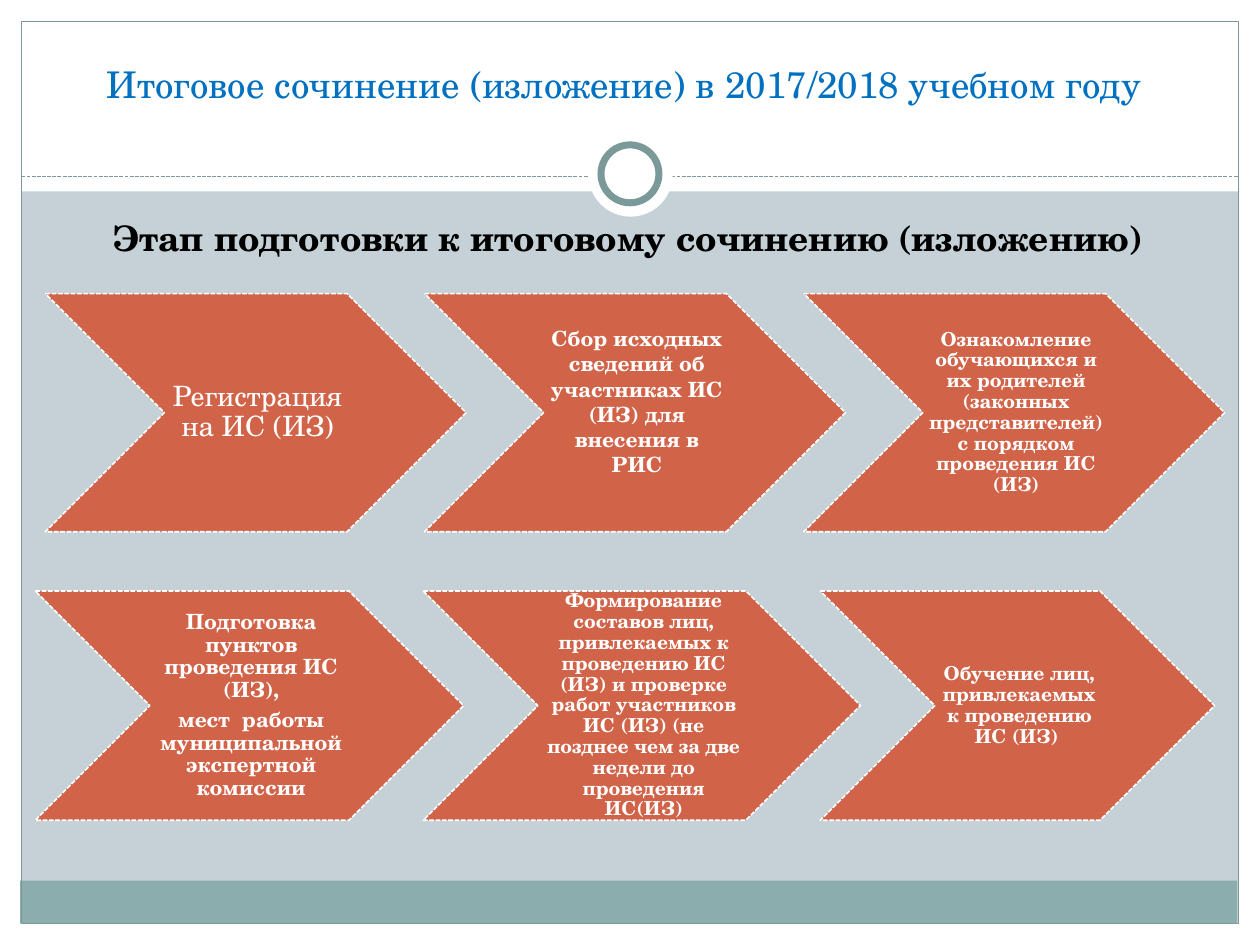
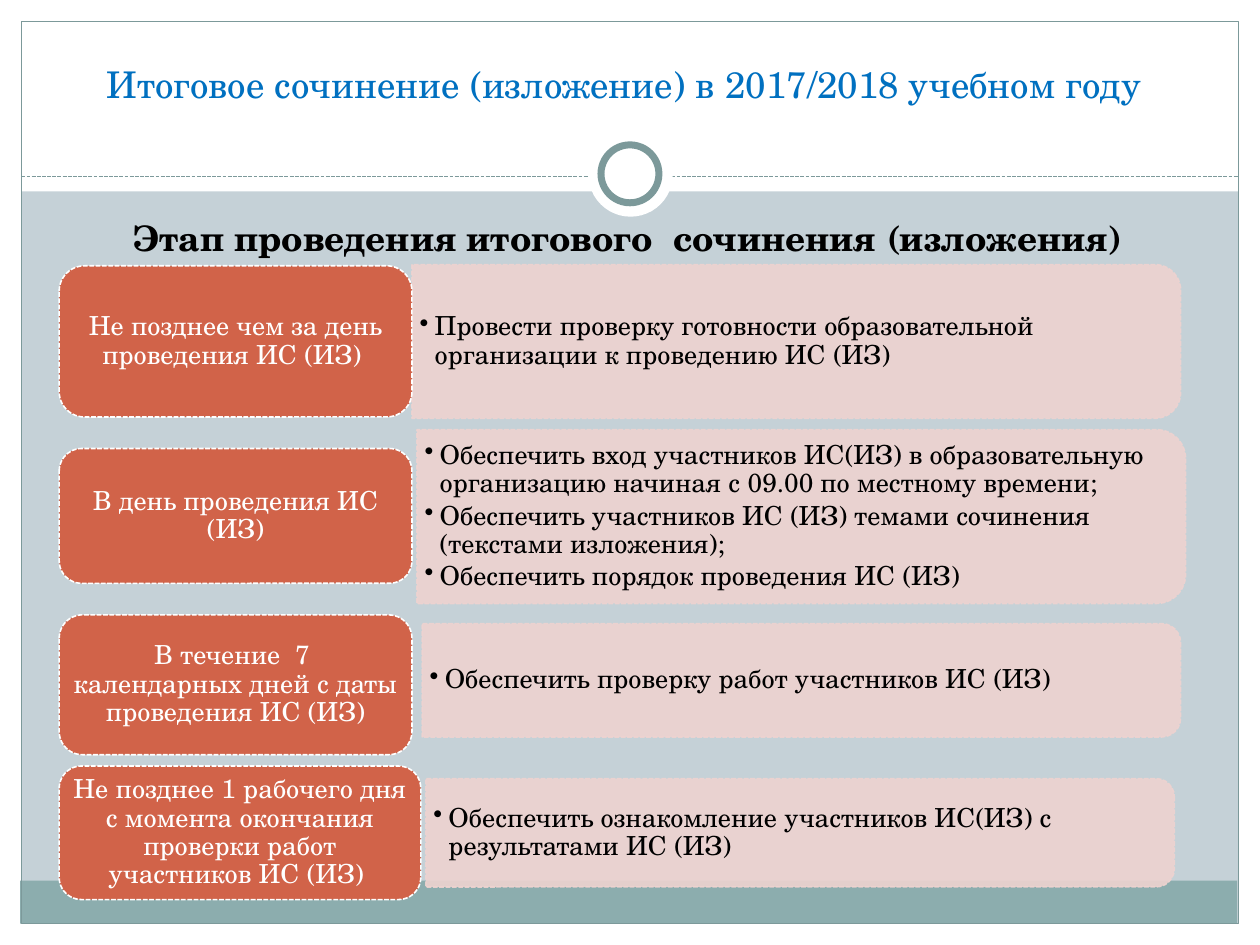
from lxml.etree import SubElement
from pptx import Presentation
from pptx.dml.color import RGBColor
from pptx.enum.dml import MSO_LINE
from pptx.enum.shapes import MSO_CONNECTOR, MSO_SHAPE as SHAPE
from pptx.enum.text import MSO_ANCHOR as ANCHOR, MSO_AUTO_SIZE, PP_ALIGN as ALIGN
from pptx.oxml.ns import qn
from pptx.util import Inches, Pt

FONT = "TeX Gyre Schola"
WHITE = RGBColor(0xFF, 0xFF, 0xFF)
BLACK = RGBColor(0, 0, 0)
BACKGROUND = RGBColor(0xC5, 0xD1, 0xD7)
BAND = RGBColor(0x8C, 0xAD, 0xAE)
FRAME = RGBColor(0x7C, 0x99, 0x9A)
TITLE_BLUE = RGBColor(0x00, 0x70, 0xC0)
ORANGE = RGBColor(0xD1, 0x63, 0x49)
PINK = RGBColor(0xEE, 0xD3, 0xD0)

TITLE = "Итоговое сочинение (изложение) в 2017/2018 учебном году "

# Chevron: width, text size, bold, text, bottom inset
REGISTRATION_ROW = [
    (3.34, 16, False, "Регистрация на ИС (ИЗ)", 0.02),
    (3.34, 12, True, "Сбор исходных сведений об участниках ИС (ИЗ) для внесения в РИС", 0.2),
    (3.34, 11, True, "Ознакомление обучающихся и их родителей (законных представителей) "
                     "с порядком проведения ИС (ИЗ)", 0.02),
]
PREPARATION_ROW = [
    (3.4, 12, True, "Подготовка пунктов проведения ИС (ИЗ),\n"
                    "мест  работы муниципальной экспертной комиссии", 0.02),
    (3.47, 11, True, "Формирование составов лиц, привлекаемых к проведению ИС (ИЗ) и проверке "
                     "работ участников ИС (ИЗ) (не позднее чем за две недели до проведения ИС(ИЗ)", 0.02),
    (3.13, 11, True, "Обучение лиц, привлекаемых к проведению ИС (ИЗ) ", 0.02),
]

# Stage: deadline box, deadline, task panel, tasks
STAGES = [
    ((0.47, 2.11, 2.8, 1.2), "Не позднее чем за день проведения ИС (ИЗ) ",
     (3.27, 2.1, 6.1, 1.22),
     "Провести проверку готовности образовательной организации к проведению ИС (ИЗ)"),
    ((0.47, 3.56, 2.8, 1.07), "В день проведения ИС (ИЗ)",
     (3.31, 3.41, 6.1, 1.38),
     "Обеспечить вход участников ИС(ИЗ) в образовательную организацию начиная "
     "с 09.00 по местному времени;\n"
     "Обеспечить участников ИС (ИЗ) темами сочинения (текстами изложения);\n"
     "Обеспечить порядок проведения ИС (ИЗ)"),
    ((0.47, 4.88, 2.8, 1.11), "В течение  7  календарных дней с даты проведения ИС (ИЗ)",
     (3.35, 4.95, 6.02, 0.9),
     "Обеспечить проверку работ участников ИС (ИЗ)"),
    ((0.47, 6.08, 2.87, 1.06), "Не позднее 1 рабочего дня с момента окончания проверки "
                               "работ участников ИС (ИЗ) ",
     (3.38, 6.18, 5.94, 0.86),
     "Обеспечить ознакомление участников ИС(ИЗ) с результатами ИС (ИЗ)"),
]


def place(box):
    return [Inches(length) for length in box]


def add_shape(page, kind, box, fill=None, line=None, width=0.75, dash=None):
    shape = page.shapes.add_shape(kind, *place(box))
    shape.shadow.inherit = False
    if fill is None:
        shape.fill.background()
    else:
        shape.fill.solid()
        shape.fill.fore_color.rgb = fill
    if line is None:
        shape.line.fill.background()
    else:
        shape.line.color.rgb = line
        shape.line.width = Pt(width)
        shape.line.dash_style = dash
    return shape


def write(shape, text, size, color, bold=False, align=ALIGN.CENTER, anchor=ANCHOR.MIDDLE,
          insets=(0.1, 0.05, 0.1, 0.05), spacing=None, after=0):
    """Fill a shape with text; after is a share of the text size."""
    frame = shape.text_frame
    frame.text = text
    frame.word_wrap = True
    frame.auto_size = MSO_AUTO_SIZE.NONE
    frame.vertical_anchor = anchor
    (frame.margin_left, frame.margin_top,
     frame.margin_right, frame.margin_bottom) = place(insets)
    for para in frame.paragraphs:
        para.alignment = align
        para.line_spacing = spacing
        para.space_after = Pt(round(size * after, 1))
        for span in para.runs:
            span.font.name = FONT
            span.font.size = Pt(size)
            span.font.bold = bold
            span.font.color.rgb = color


def add_bullets(frame):
    for para in frame.paragraphs:
        properties = para._p.get_or_add_pPr()
        properties.set("marL", str(Inches(0.12)))
        properties.set("indent", str(-Inches(0.12)))
        SubElement(properties, qn("a:buChar")).set("char", "•")


def decorate_layout(page):
    """Draw the shared frame on a page, then move it into the page's layout."""
    parts = [add_shape(page, SHAPE.RECTANGLE, box, fill) for box, fill in [
        ((0, 7.33, 10, 0.17), WHITE),
        ((0, 0, 10, 1.52), WHITE),
        ((0, 0, 0.17, 7.5), WHITE),
        ((9.83, 0, 0.17, 7.5), WHITE),
        ((0.16, 6.99, 9.66, 0.34), BAND),
    ]]
    parts.append(add_shape(page, SHAPE.RECTANGLE, (0.17, 0.17, 9.66, 7.16), line=FRAME))

    divider = page.shapes.add_connector(MSO_CONNECTOR.STRAIGHT, *place((0.17, 1.4, 9.83, 1.4)))
    divider.line.color.rgb = FRAME
    divider.line.width = Pt(0.75)
    divider.line.dash_style = MSO_LINE.SQUARE_DOT
    SubElement(divider.element.spPr, qn("a:effectLst"))
    parts.append(divider)

    parts.append(add_shape(page, SHAPE.OVAL, (4.67, 1.05, 0.67, 0.67), WHITE))
    parts.append(add_shape(page, SHAPE.OVAL, (4.77, 1.15, 0.46, 0.46), WHITE, FRAME, 4))

    for number, part in enumerate(parts, start=101):
        part.element.xpath(".//p:cNvPr")[0].set("id", str(number))
        page.slide_layout.shapes.element.append(part.element)


def add_page(deck, layout, heading):
    page = deck.slides.add_slide(layout)
    title = page.shapes.title
    title.left, title.top, title.width, title.height = place((0.33, 0.25, 9.33, 0.83))
    write(title, TITLE, 21, TITLE_BLUE)
    box = page.shapes.add_textbox(*place((0.33, 1.67, 9.3, 5)))
    write(box, heading, 20, BLACK, bold=True, anchor=ANCHOR.TOP)
    box.text_frame.paragraphs[0].space_before = Pt(4)
    return page


def add_chevron_row(page, left, top, height, overlap, steps):
    for width, size, bold, text, bottom in steps:
        chevron = add_shape(page, SHAPE.CHEVRON, (left, top, width, height),
                            ORANGE, WHITE, 0.9, MSO_LINE.SQUARE_DOT)
        spacing = 0.9 if bottom == 0.02 else 1.0
        write(chevron, text, size, WHITE, bold, insets=(0.05, 0.02, 0.02, bottom),
              spacing=spacing, after=0.35)
        left += width - overlap


def add_task_panel(page, box, tasks):
    left, top, width, height = box
    # The panel is a top-rounded rectangle turned to the right about its centre
    turned = (left + (width - height) / 2, top + (height - width) / 2, height, width)
    panel = add_shape(page, SHAPE.ROUND_2_SAME_RECTANGLE, turned,
                      PINK, PINK, 0.9, MSO_LINE.SQUARE_DOT)
    panel.rotation = 90
    for color in panel.element.spPr.iter(qn("a:srgbClr")):
        SubElement(color, qn("a:alpha")).set("val", "90000")

    corner = 0.05 * height
    label = page.shapes.add_textbox(
        *place((left, top + corner, width - corner, height - 2 * corner)))
    write(label, tasks, 15, BLACK, align=ALIGN.LEFT, insets=(0.06, 0.03, 0.06, 0.03),
          spacing=0.9, after=0.15)
    add_bullets(label.text_frame)


def add_stage(page, deadline_box, deadline, panel_box, tasks):
    add_task_panel(page, panel_box, tasks)
    card = add_shape(page, SHAPE.ROUNDED_RECTANGLE, deadline_box,
                     ORANGE, WHITE, 0.9, MSO_LINE.SQUARE_DOT)
    write(card, deadline, 15, WHITE, insets=(0.06, 0.03, 0.06, 0.03), spacing=0.9, after=0.35)


def main():
    deck = Presentation()
    deck.slide_width, deck.slide_height = Inches(10), Inches(7.5)
    background = deck.slide_master.background.fill
    background.solid()
    background.fore_color.rgb = BACKGROUND
    title_only = deck.slide_layouts[5]

    # Preparation
    page = add_page(deck, title_only, "Этап подготовки к итоговому сочинению (изложению)")
    decorate_layout(page)
    add_chevron_row(page, 0.36, 2.33, 1.89, 0.33, REGISTRATION_ROW)
    add_chevron_row(page, 0.28, 4.69, 1.82, 0.32, PREPARATION_ROW)

    # Conduct
    page = add_page(deck, title_only, "Этап проведения итогового  сочинения (изложения)")
    for stage in STAGES:
        add_stage(page, *stage)

    deck.save("out.pptx")


if __name__ == "__main__":
    main()
